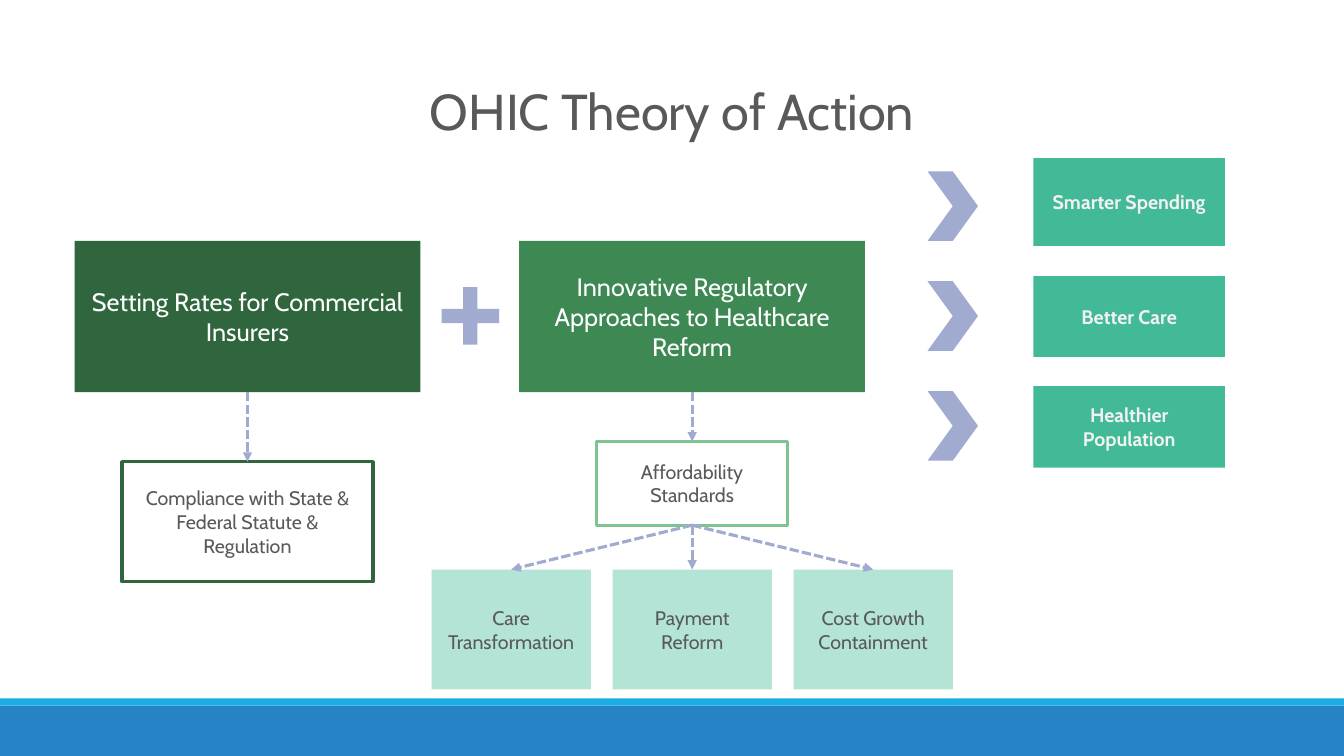
import pptx
import pptx.dml.color
import pptx.enum.dml
import pptx.enum.shapes
import pptx.enum.text
import pptx.oxml
import pptx.oxml.ns
import pptx.util

WIDTH, HEIGHT = 13.33, 7.5
FONT = "Cabin"
COLOURS = {
    "band": "2683C6", "stripe": "1CADE4", "rates": "2F663E", "reform": "3E8853",
    "standards": "7EC492", "strategy": "B3E4D6", "outcome": "42BA97",
    "accent": "A1ABD0", "text": "595959", "white": "FFFFFF", "pale": "F2F2F2",
}
SHAPES = pptx.enum.shapes.MSO_SHAPE
TOP, BOTTOM = 0, 2


def colour(name):
    """Return the named colour of the palette."""
    return pptx.dml.color.RGBColor.from_string(COLOURS[name])


def inches(*lengths):
    """Convert lengths in inches to a list of slide units."""
    return [pptx.util.Inches(length) for length in lengths]


def write_text(shape, text, size=14, ink="text", bold=False):
    """Write centred text into a shape."""
    frame = shape.text_frame
    frame.word_wrap = True
    frame.auto_size = pptx.enum.text.MSO_AUTO_SIZE.NONE
    frame.vertical_anchor = pptx.enum.text.MSO_ANCHOR.MIDDLE
    frame.text = text
    paragraph = frame.paragraphs[0]
    paragraph.alignment = pptx.enum.text.PP_ALIGN.CENTER
    font = paragraph.runs[0].font
    font.name, font.size, font.bold = FONT, pptx.util.Pt(size), bold
    font.color.rgb = colour(ink)


def add_block(slide, box, fill=None, outline=None, kind=SHAPES.RECTANGLE, text=None, **text_format):
    """Add a flat shape in a box, with optional text."""
    shape = slide.shapes.add_shape(kind, *inches(*box))
    shape.shadow.inherit = False
    if fill:
        shape.fill.solid()
        shape.fill.fore_color.rgb = colour(fill)
    else:
        shape.fill.background()
    if outline:
        shape.line.color.rgb = colour(outline)
        shape.line.width = pptx.util.Pt(2.25)
    else:
        shape.line.fill.background()
    if text:
        write_text(shape, text, **text_format)
    return shape


def add_arrow(slide, source, target):
    """Join the bottom of one block to the top of another with a dashed arrow."""
    arrow = slide.shapes.add_connector(pptx.enum.shapes.MSO_CONNECTOR.STRAIGHT, 0, 0, 0, 0)
    arrow.begin_connect(source, BOTTOM)
    arrow.end_connect(target, TOP)
    arrow.line.color.rgb = colour("accent")
    arrow.line.width = pptx.util.Pt(2.25)
    arrow.line.dash_style = pptx.enum.dml.MSO_LINE.SQUARE_DOT
    head = pptx.oxml.parse_xml(f'<a:tailEnd {pptx.oxml.ns.nsdecls("a")} type="triangle"/>')
    arrow.line._get_or_add_ln().append(head)
    effects = pptx.oxml.parse_xml(f'<a:effectLst {pptx.oxml.ns.nsdecls("a")}/>')
    arrow._element.spPr.append(effects)


def add_footer(slide, box):
    """Fill the box with the footer band under its thin stripe."""
    left, top, width, height = box
    stripe = 0.07
    add_block(slide, (left, top + stripe, width, height - stripe), fill="band")
    add_block(slide, (left, top, width, stripe), fill="stripe")


def add_title(slide, box):
    """Place the title placeholder in the box."""
    title = slide.shapes.title
    title.left, title.top, title.width, title.height = inches(*box)
    write_text(title, "OHIC Theory of Action", size=36)


def add_rates(slide, box):
    """Draw the rate setting pillar and the compliance box below it."""
    left, top, width, height = box
    pillar = add_block(slide, (left, top, width, 1.5), fill="rates", size=18, ink="white",
                       text="Setting Rates for Commercial Insurers")
    inner, depth = 2.49, 1.19
    compliance = add_block(
        slide, (left + (width - inner) / 2, top + height - depth, inner, depth), outline="rates",
        text="Compliance with State & Federal Statute & Regulation")
    add_arrow(slide, pillar, compliance)


def add_reform(slide, box):
    """Draw the reform pillar, its standards and the row of strategies."""
    left, top, width, height = box
    centre = left + width / 2
    pillar = add_block(slide, (left, top, width, 1.5), fill="reform", size=18, ink="white",
                       text="Innovative Regulatory Approaches to Healthcare Reform")
    inner = 1.9
    standards = add_block(slide, (centre - inner / 2, top + 1.99, inner, 0.83),
                          outline="standards", text="Affordability Standards")
    add_arrow(slide, pillar, standards)
    card, depth, pitch = 1.58, 1.19, 1.795
    strategies = ["Care Transformation", "Payment Reform", "Cost Growth Containment"]
    for column, label in enumerate(strategies, start=-1):
        card_box = (centre + column * pitch - card / 2, top + height - depth, card, depth)
        strategy = add_block(slide, card_box, fill="strategy", text=label)
        add_arrow(slide, standards, strategy)


def add_outcomes(slide, box):
    """Draw a column of chevrons beside the three outcomes."""
    left, top, width, height = box
    block, pitch = 1.9, 1.09
    outcomes = [("Smarter Spending", 0, 0.87), ("Better Care", 1.17, 0.8),
                ("Healthier Population", 2.26, height - 2.26)]
    for row, (label, offset, depth) in enumerate(outcomes):
        add_block(slide, (left, top + 0.13 + row * pitch, 0.5, 0.69),
                  fill="accent", kind=SHAPES.CHEVRON)
        add_block(slide, (left + width - block, top + offset, block, depth),
                  fill="outcome", text=label, ink="pale", bold=True)


def add_plus(slide, box):
    """Place the plus sign between the two pillars."""
    plus = add_block(slide, box, fill="accent", kind=SHAPES.CROSS)
    plus.adjustments[0] = 0.375


def main():
    """Build and save the slide."""
    presentation = pptx.Presentation()
    presentation.slide_width, presentation.slide_height = inches(WIDTH, HEIGHT)
    slide = presentation.slides.add_slide(presentation.slide_layouts[5])
    add_footer(slide, (0, 6.93, WIDTH, HEIGHT - 6.93))
    add_title(slide, (WIDTH * 0.2, 0.74, WIDTH * 0.6, 0.71))
    add_rates(slide, (0.74, 2.39, 3.43, 3.38))
    add_reform(slide, (5.15, 2.39, 3.43, 4.45))
    add_plus(slide, (4.38, 2.85, 0.57, 0.57))
    add_outcomes(slide, (9.2, 1.57, 2.95, 3.07))
    presentation.save("out.pptx")


if __name__ == "__main__":
    main()
